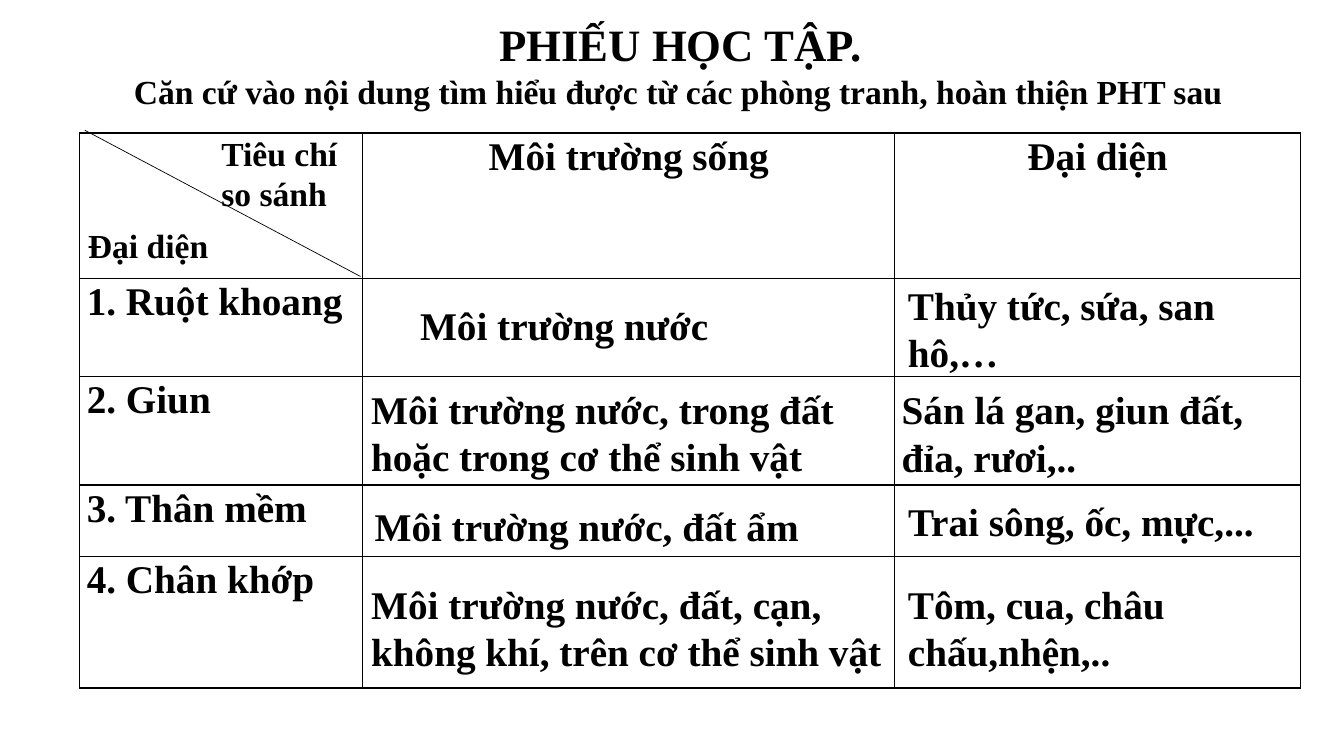
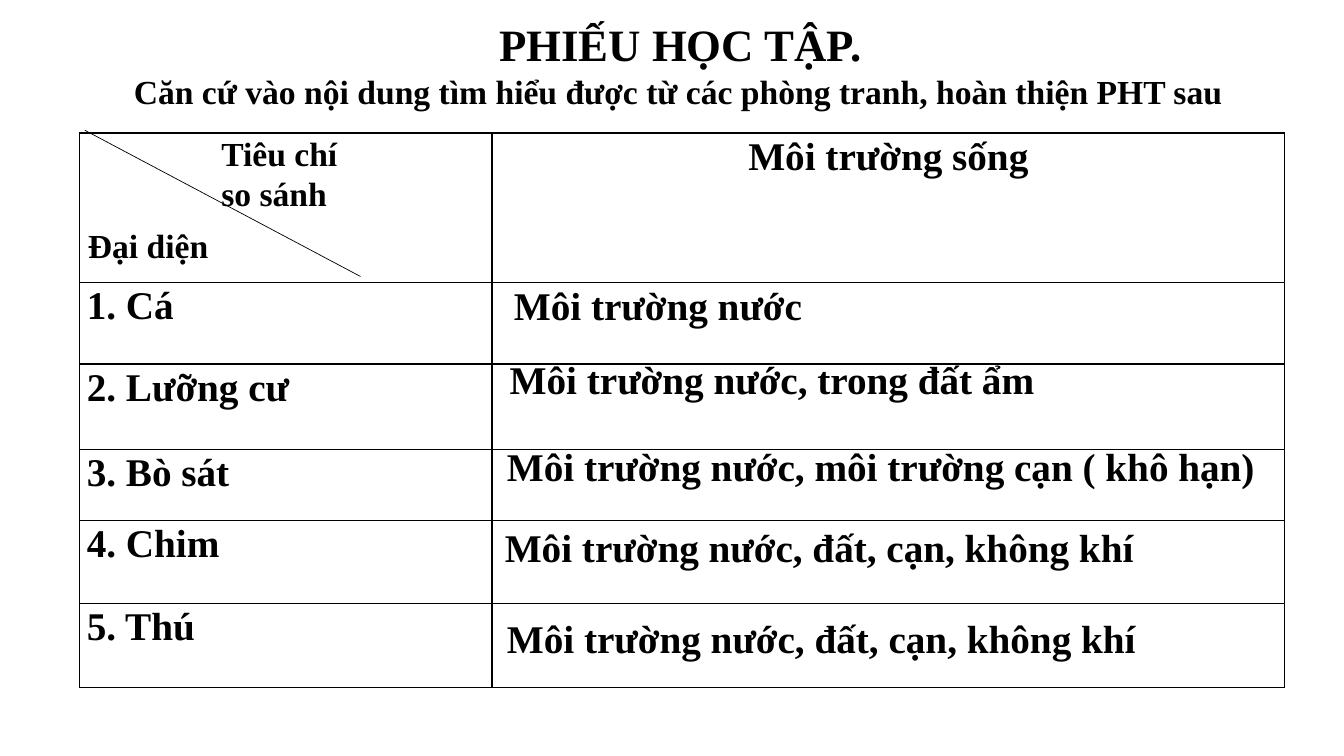
"""Build two study worksheets that compare the habitats of animal groups."""
from lxml.etree import SubElement
from pptx import Presentation
from pptx.dml.color import RGBColor
from pptx.enum.shapes import MSO_CONNECTOR
from pptx.enum.text import MSO_AUTO_SIZE, PP_ALIGN as Align
from pptx.oxml.ns import qn
from pptx.util import Pt

COLORS = {"ink": "000000", "paper": "FFFFFF"}
FONT = "Times New Roman"
TITLE, LABEL, BODY = 32, 24, 28
ONE_LINE, TWO_LINES = 41, 75

HEADING = "PHIẾU HỌC TẬP."
TASK = "Căn cứ vào nội dung tìm hiểu được từ các phòng tranh, hoàn thiện PHT sau"

INVERTEBRATES = {
    "columns": [202, 380, 290],
    "rows": [104, 70, 77.5, 51, 94],
    "headers": ["Môi trường sống", "Đại diện"],
    "groups": ["Ruột khoang", "Giun", "Thân mềm", "Chân khớp"],
    "answers": [
        ("Môi trường nước", 277, 211.5, 252, ONE_LINE, Align.CENTER),
        ("Thủy tức, sứa, san hô,…", 641.5, 197.5, 287.5, TWO_LINES, Align.LEFT),
        ("Môi trường nước, trong đất hoặc trong cơ thể sinh vật",
         258, 271.5, 350, TWO_LINES, Align.LEFT),
        ("Sán lá gan, giun đất, đỉa, rươi,..", 637, 272, 294, TWO_LINES, Align.LEFT),
        ("Môi trường nước, đất ẩm", 260.5, 355, 366, ONE_LINE, Align.LEFT),
        ("Trai sông, ốc, mực,...", 641.5, 351.5, 292, ONE_LINE, Align.LEFT),
        ("Môi trường nước, đất, cạn, không khí, trên cơ thể sinh vật",
         258, 411, 398, TWO_LINES, Align.LEFT),
        ("Tôm, cua, châu chấu,nhện,..", 641.5, 411, 282, TWO_LINES, Align.LEFT),
    ],
}
VERTEBRATES = {
    "columns": [294.5, 566],
    "rows": [107, 58, 61, 51, 59, 60],
    "headers": ["Môi trường sống"],
    "groups": ["Cá", "Lưỡng cư", "Bò sát", "Chim", "Thú"],
    "answers": [
        ("Môi trường nước", 360, 197.5, 252, ONE_LINE, Align.LEFT),
        ("Môi trường nước, trong đất ẩm", 357, 250, 515.5, ONE_LINE, Align.LEFT),
        ("Môi trường nước, môi trường cạn ( khô hạn)",
         355, 312.5, 568, ONE_LINE, Align.LEFT),
        ("Môi trường nước, đất, cạn, không khí", 353.5, 370, 545, ONE_LINE, Align.LEFT),
        ("Môi trường nước, đất, cạn, không khí", 355, 435.5, 545, ONE_LINE, Align.LEFT),
    ],
}


class Worksheet:
    def __init__(self):
        self.presentation = Presentation()
        self.presentation.slide_width = Pt(960)
        self.presentation.slide_height = Pt(540)
        self.slide = None

    def new_slide(self):
        layout = self.presentation.slide_layouts[6]
        self.slide = self.presentation.slides.add_slide(layout)
        fill = self.slide.background.fill
        fill.solid()
        fill.fore_color.rgb = RGBColor.from_string(COLORS["paper"])

    def add_text(self, paragraph, text, size, align=Align.LEFT, spacing=None):
        paragraph.alignment = align
        if spacing:
            paragraph.line_spacing = spacing
        run = paragraph.add_run()
        run.text = text
        run.font.name = FONT
        run.font.size = Pt(size)
        run.font.bold = True
        run.font.color.rgb = RGBColor.from_string(COLORS["ink"])

    def box(self, left, top, width, height):
        shape = self.slide.shapes.add_textbox(Pt(left), Pt(top), Pt(width), Pt(height))
        frame = shape.text_frame
        frame.word_wrap = True
        frame.auto_size = MSO_AUTO_SIZE.SHAPE_TO_FIT_TEXT
        return frame

    def title(self):
        frame = self.box(88.5, 8.5, 795, 72)
        self.add_text(frame.paragraphs[0], HEADING, TITLE, Align.CENTER)
        self.add_text(frame.add_paragraph(), TASK, LABEL)

    def text(self, text, left, top, width, height, align, size=BODY, spacing=None):
        frame = self.box(left, top, width, height)
        self.add_text(frame.paragraphs[0], text, size, align, spacing)

    def diagonal(self):
        line = self.slide.shapes.add_connector(
            MSO_CONNECTOR.STRAIGHT, Pt(60.5), Pt(93), Pt(257.5), Pt(197.5))
        line.line.width = Pt(0.5)
        line.line.color.rgb = RGBColor.from_string(COLORS["ink"])
        SubElement(line._element.spPr, qn("a:effectLst"))

    def style_cell(self, cell):
        cell.margin_left = cell.margin_right = Pt(5)
        cell.margin_top = cell.margin_bottom = Pt(0)
        properties = cell._tc.get_or_add_tcPr()
        for side in ("lnL", "lnR", "lnT", "lnB"):
            border = SubElement(properties, qn(f"a:{side}"), w=str(Pt(1)))
            solid = SubElement(border, qn("a:solidFill"))
            SubElement(solid, qn("a:srgbClr"), val=COLORS["ink"])
        cell.fill.background()

    def table(self, columns, rows, headers, groups):
        table = self.slide.shapes.add_table(
            len(rows), len(columns), Pt(57), Pt(95),
            Pt(sum(columns)), Pt(sum(rows))).table
        table.first_row = table.horz_banding = False
        for column, width in zip(table.columns, columns):
            column.width = Pt(width)
        for row, height in zip(table.rows, rows):
            row.height = Pt(height)
        for cell in table.iter_cells():
            self.style_cell(cell)
        for index, header in enumerate(headers, 1):
            paragraph = table.cell(0, index).text_frame.paragraphs[0]
            self.add_text(paragraph, header, BODY, Align.CENTER, 1.05)
        for index, group in enumerate(groups, 1):
            paragraph = table.cell(index, 0).text_frame.paragraphs[0]
            self.add_text(paragraph, f"{index}. {group}", BODY, spacing=1.05)

    def sheet(self, columns, rows, headers, groups, answers):
        self.new_slide()
        self.table(columns, rows, headers, groups)
        self.diagonal()
        self.title()
        self.text("Đại diện", 52.5, 156, 106.5, 36, Align.CENTER, LABEL, 1.05)
        self.text("Tiêu chí so sánh", 151, 91.5, 106.5, 65.5, Align.LEFT, LABEL)
        for answer in answers:
            self.text(*answer)


def main():
    worksheet = Worksheet()
    for content in (INVERTEBRATES, VERTEBRATES):
        worksheet.sheet(**content)
    worksheet.presentation.save("out.pptx")


if __name__ == "__main__":
    main()
